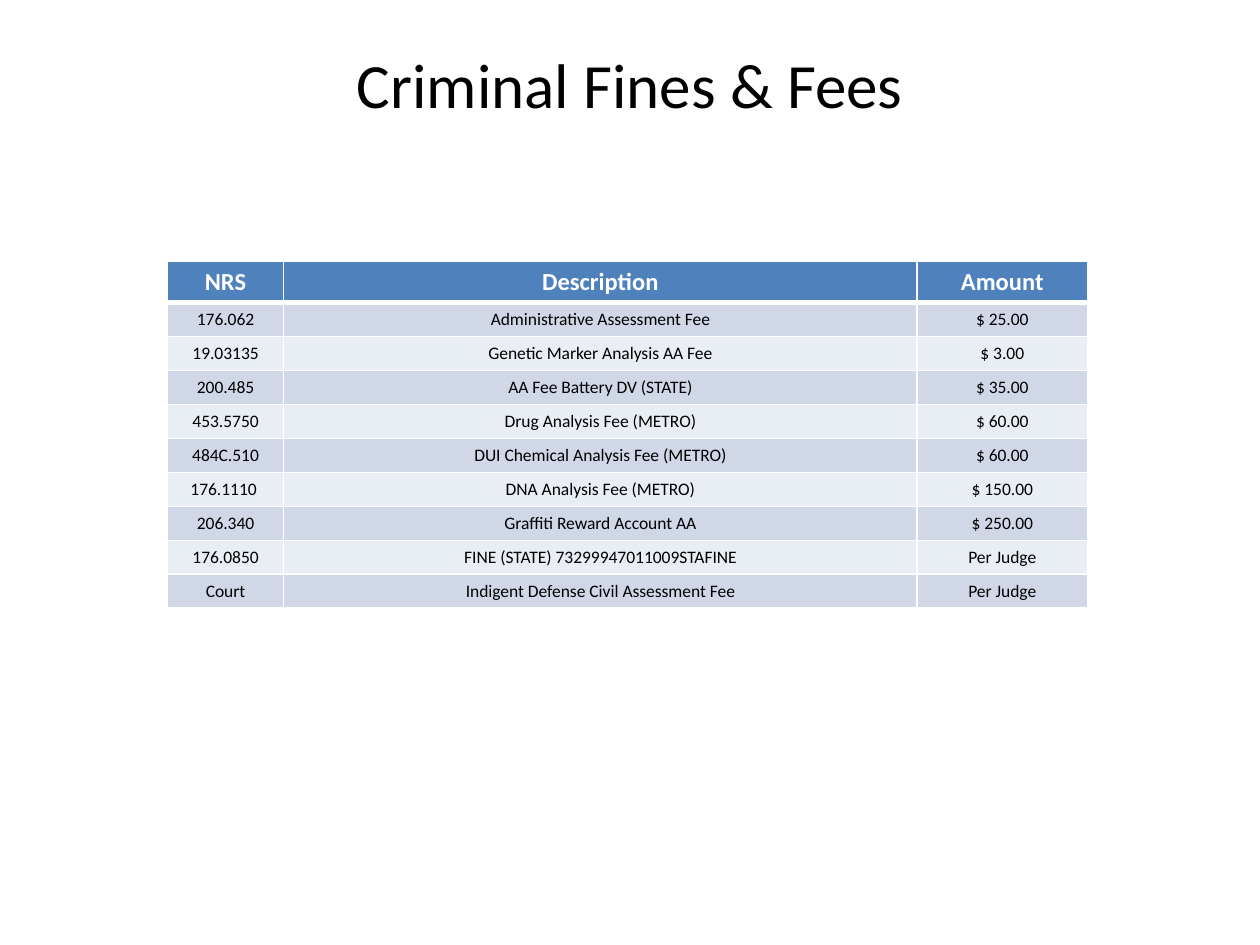
from pptx import Presentation
from pptx.dml.color import RGBColor
from pptx.enum.text import MSO_ANCHOR as Anchor, PP_ALIGN as Align
from pptx.oxml import parse_xml
from pptx.oxml.ns import nsdecls
from pptx.util import Inches, Pt

FONT = "Calibri"
BLACK, WHITE = "000000", "FFFFFF"
HEADER_FILL = "4F81BD"
BAND_FILLS = ("D0D8E8", "E9EDF4")
COLUMN_WIDTHS = (0.92, 5.03, 1.35)
HEADER_HEIGHT, ROW_HEIGHT = 0.33, 0.27
HEADINGS = ("NRS", "Description", "Amount")
FEES = (
    ("176.062", "Administrative Assessment Fee", " $ 25.00 "),
    ("19.03135", "Genetic Marker Analysis AA Fee", " $ 3.00 "),
    ("200.485", "AA Fee Battery DV (STATE)", " $ 35.00 "),
    ("453.5750", "Drug Analysis Fee (METRO)", " $ 60.00 "),
    ("484C.510", "DUI Chemical Analysis Fee (METRO)", " $ 60.00 "),
    ("176.1110 ", "DNA Analysis Fee (METRO)", " $ 150.00 "),
    ("206.340", "Graffiti Reward Account AA", " $ 250.00 "),
    ("176.0850", "FINE (STATE) 73299947011009STAFINE", " Per Judge "),
    ("Court", "Indigent Defense Civil Assessment Fee", " Per Judge "),
)


def color(hex_value):
    """Turn a hex string into a colour."""
    return RGBColor.from_string(hex_value)


def write_text(text_frame, text, size, text_color, bold=False):
    """Write one centred run into a text frame."""
    paragraph = text_frame.paragraphs[0]
    paragraph.alignment = Align.CENTER
    run = paragraph.add_run()
    run.text = text
    run.font.name = FONT
    run.font.size = Pt(size)
    run.font.bold = bold
    run.font.color.rgb = color(text_color)


def add_title(slide, text):
    """Add the slide title."""
    box = slide.shapes.add_textbox(Inches(0.25), Inches(0.08), Inches(9.5), Inches(1.17))
    box.text_frame.word_wrap = True
    box.text_frame.vertical_anchor = Anchor.MIDDLE
    write_text(box.text_frame, text, 36, BLACK)


def set_borders(cell, top, bottom):
    """Draw white cell borders with the given top and bottom widths in points."""
    properties = cell._tc.get_or_add_tcPr()
    for side, width in (("L", 1), ("R", 1), ("T", top), ("B", bottom)):
        properties.append(parse_xml(
            f'<a:ln{side} {nsdecls("a")} w="{Pt(width)}"><a:solidFill>'
            f'<a:srgbClr val="{WHITE}"/></a:solidFill></a:ln{side}>'
        ))


def style_cell(cell, fill, top, bottom):
    """Set the borders, fill, margins and anchor of a cell."""
    set_borders(cell, top, bottom)
    cell.fill.solid()
    cell.fill.fore_color.rgb = color(fill)
    cell.margin_top = cell.margin_bottom = Inches(0.04)
    cell.vertical_anchor = Anchor.MIDDLE


def add_fee_table(slide):
    """Add the table of fees with a header and banded rows."""
    height = HEADER_HEIGHT + ROW_HEIGHT * len(FEES)
    table = slide.shapes.add_table(
        len(FEES) + 1, len(HEADINGS), Inches(1.33), Inches(2.07),
        Inches(sum(COLUMN_WIDTHS)), Inches(height),
    ).table
    for column, width in zip(table.columns, COLUMN_WIDTHS):
        column.width = Inches(width)
    for index, row in enumerate(table.rows):
        row.height = Inches(ROW_HEIGHT if index else HEADER_HEIGHT)
    for cell, heading in zip(table.rows[0].cells, HEADINGS):
        style_cell(cell, HEADER_FILL, 1, 3)
        write_text(cell.text_frame, heading, 14, WHITE, bold=True)
    for index, fee in enumerate(FEES):
        for cell, text in zip(table.rows[index + 1].cells, fee):
            style_cell(cell, BAND_FILLS[index % 2], 1 if index else 3, 1)
            write_text(cell.text_frame, text, 10, BLACK)


def main():
    """Build and save the slide."""
    presentation = Presentation()
    presentation.slide_width = Inches(10)
    presentation.slide_height = Inches(7.5)
    slide = presentation.slides.add_slide(presentation.slide_layouts[6])
    add_title(slide, "Criminal Fines & Fees")
    add_fee_table(slide)
    presentation.save("out.pptx")


if __name__ == "__main__":
    main()
